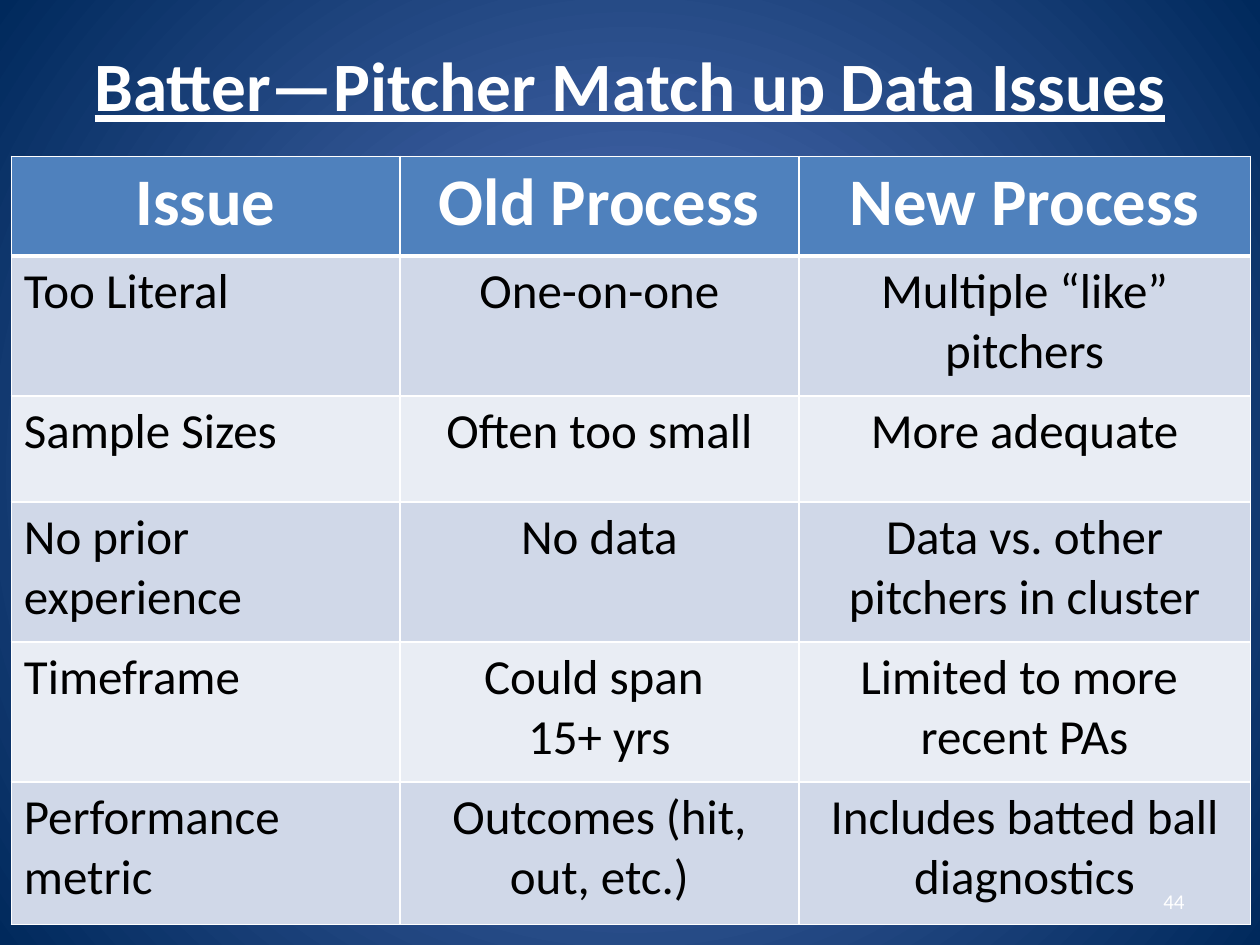
from pptx import Presentation
from pptx import util as u
from pptx.dml.color import RGBColor
from pptx.enum import text as t
from pptx.oxml import parse_xml
from pptx.oxml.ns import nsdecls, qn

WHITE = RGBColor(0xFF, 0xFF, 0xFF)
BLACK = RGBColor(0, 0, 0)
GLOW = RGBColor(0x5E, 0x7C, 0xC5)
NAVY = RGBColor(0x00, 0x29, 0x5C)
HEAD = RGBColor(0x4F, 0x81, 0xBD)
BANDS = [RGBColor(0xD0, 0xD8, 0xE8), RGBColor(0xE9, 0xED, 0xF4)]
LEFT, MID, RIGHT = t.PP_ALIGN.LEFT, t.PP_ALIGN.CENTER, t.PP_ALIGN.RIGHT

COLS = [222, 228, 258]
ROWS = [57, 80, 60.5, 80, 80, 81.5]
ISSUES = [
    ["Issue", "Old Process", "New Process"],
    ["Too Literal", "One-on-one", "Multiple “like” pitchers"],
    ["Sample Sizes", "Often too small", "More adequate"],
    ["No prior experience", "No data", "Data vs. other pitchers in cluster"],
    ["Timeframe", "Could span \n15+ yrs", "Limited to more \nrecent PAs"],
    ["Performance metric", "Outcomes (hit, out, etc.)",
     "Includes batted ball diagnostics"],
]


def write(frame, words, size=28, color=WHITE, align=MID, bold=False, line=False):
    """Fill a text frame with one paragraph per line of words."""
    frame.text = words
    for para in frame.paragraphs:
        para.alignment = align
        for run in para.runs:
            font = run.font
            font.name, font.size = "Calibri", u.Pt(size)
            font.bold, font.underline = bold, line
            font.color.rgb = color


def label(slide, words, x, y, w, h, **style):
    """Add a wrapped text box, centred vertically."""
    frame = slide.shapes.add_textbox(*map(u.Pt, (x, y, w, h))).text_frame
    frame.word_wrap = True
    frame.vertical_anchor = t.MSO_ANCHOR.MIDDLE
    write(frame, words, **style)


def border(cell, side, width):
    """Draw one white edge of a cell."""
    cell._tc.get_or_add_tcPr().append(parse_xml(
        f'<a:ln{side} {nsdecls("a")} w="{u.Pt(width)}"><a:solidFill>'
        f'<a:srgbClr val="{WHITE}"/></a:solidFill></a:ln{side}>'))


def backdrop(slide):
    """Paint the round gradient behind the slide."""
    fill = slide.background.fill
    fill.gradient()
    for stop, color in zip(fill.gradient_stops, (GLOW, NAVY)):
        stop.color.rgb = color
    grad = slide.element.find(".//" + qn("a:gradFill"))
    lin = grad.find(qn("a:lin"))
    grad.replace(lin, parse_xml(
        f'<a:path {nsdecls("a")} path="circle"><a:fillToRect '
        'l="50000" t="50000" r="50000" b="50000"/></a:path>'))


def grid(slide, x, y):
    """Add the table of issues."""
    size = map(u.Pt, (x, y, sum(COLS), sum(ROWS)))
    table = slide.shapes.add_table(len(ROWS), len(COLS), *size).table
    for col, width in zip(table.columns, COLS):
        col.width = u.Pt(width)
    for r, (row, high) in enumerate(zip(table.rows, ROWS)):
        row.height = u.Pt(high)
        for c, cell in enumerate(row.cells):
            for side in "LRTB":
                thick = (r, side) in ((0, "B"), (1, "T"))
                border(cell, side, 3 if thick else 1)
            cell.fill.solid()
            if r == 0:
                cell.fill.fore_color.rgb = HEAD
                style = dict(size=38, bold=True)
            else:
                cell.fill.fore_color.rgb = BANDS[(r - 1) % 2]
                style = dict(color=BLACK, align=MID if c else LEFT)
            write(cell.text_frame, ISSUES[r][c], **style)


def main():
    """Build and save the slide."""
    deck = Presentation()
    deck.slide_width, deck.slide_height = u.Pt(720), u.Pt(540)
    slide = deck.slides.add_slide(deck.slide_layouts[6])
    backdrop(slide)
    label(slide, "Batter—Pitcher Match up Data Issues", 36, 12, 648, 72,
          size=39.6, bold=True, line=True)
    grid(slide, 6.5, 89.3)
    label(slide, "44", 516, 500.5, 168, 28.8, size=12, align=RIGHT)
    deck.save("out.pptx")


if __name__ == "__main__":
    main()
